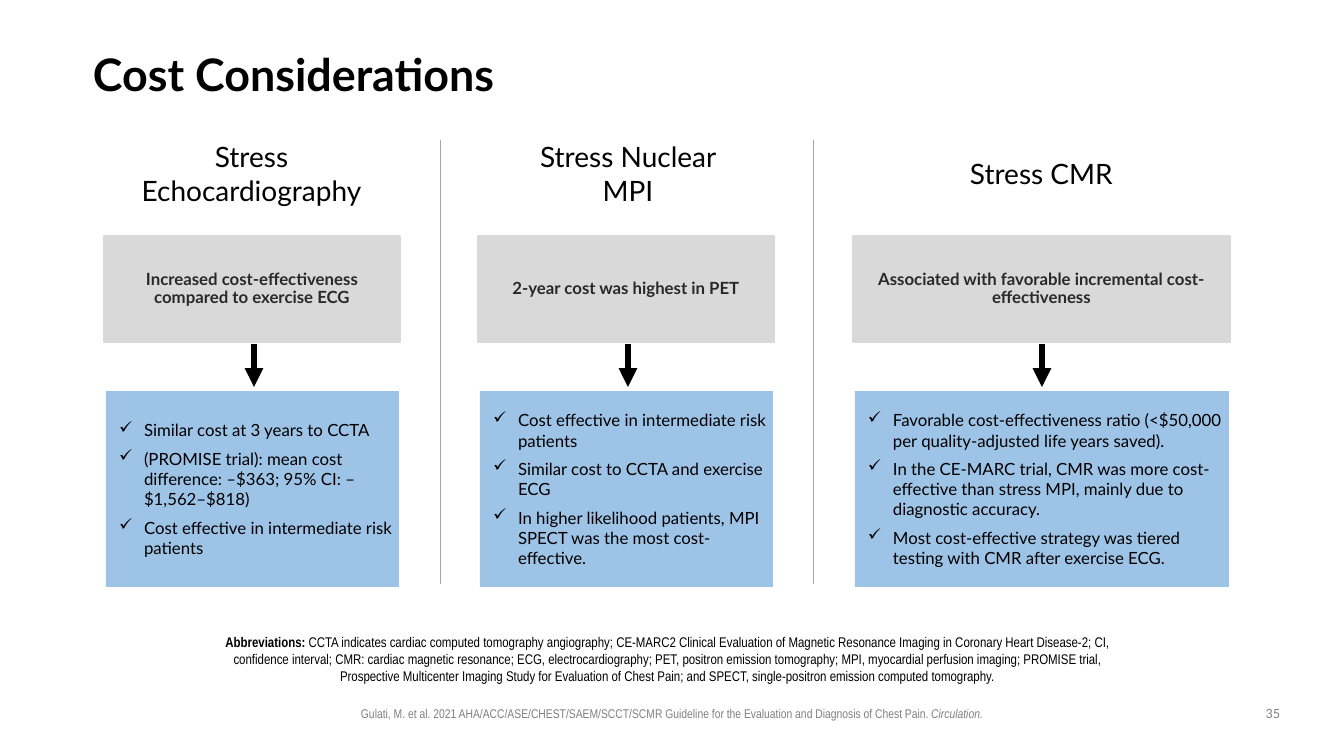
from lxml import etree
from pptx import Presentation
from pptx import util as u
from pptx.dml.color import RGBColor
from pptx.enum import shapes, text
from pptx.oxml.ns import qn

PX = 914400 / 100.8
COLORS = {"ink": "000000", "finding": "292929", "muted": "808080",
          "rule": "A6A6A6", "gray": "D9D9D9", "blue": "9DC3E6"}
CENTER, LEFT = text.PP_ALIGN.CENTER, text.PP_ALIGN.LEFT
TOP, MIDDLE = text.MSO_ANCHOR.TOP, text.MSO_ANCHOR.MIDDLE

deck = Presentation()
deck.slide_width, deck.slide_height = round(1344 * PX), round(756 * PX)
slide = deck.slides.add_slide(deck.slide_layouts[6])


def add_box(area, paragraphs, size, color="ink", font="Lato", fill=None, align=CENTER,
            anchor=TOP, insets=(10, 5, 10, 5), spacing=None, checks=False):
    """Add a text box, or a filled rectangle; each paragraph is a list of (text, style) runs."""
    place = [round(n * PX) for n in area]
    if fill:
        box = slide.shapes.add_shape(shapes.MSO_SHAPE.RECTANGLE, *place)
        box.shadow.inherit = False
        box.fill.solid()
        box.fill.fore_color.rgb = RGBColor.from_string(COLORS[fill])
        box.line.fill.background()
    else:
        box = slide.shapes.add_textbox(*place)
    frame = box.text_frame
    frame.word_wrap = True
    frame.vertical_anchor = anchor
    (frame.margin_left, frame.margin_top,
     frame.margin_right, frame.margin_bottom) = [round(n * PX) for n in insets]
    for i, runs in enumerate(paragraphs):
        para = frame.add_paragraph() if i else frame.paragraphs[0]
        if checks:
            props = para._p.get_or_add_pPr()
            props.set("marL", str(round(38 * PX)))
            props.set("indent", str(round(-25 * PX)))
            etree.SubElement(props, qn("a:buChar")).set("char", "✓")
            para.space_after = u.Pt(6)
        para.alignment = align
        if spacing:
            para.line_spacing = spacing
        for words, style in runs:
            run = para.add_run()
            run.text = words
            run.font.name, run.font.size = font, u.Pt(size)
            run.font.bold, run.font.italic = style == "bold", style == "italic"
            run.font.color.rgb = RGBColor.from_string(COLORS[color])
    return box


def add_vertical(x, top, bottom, color, width):
    x, top, bottom = round(x * PX), round(top * PX), round(bottom * PX)
    line = slide.shapes.add_connector(shapes.MSO_CONNECTOR.STRAIGHT, x, top, x, bottom)
    line.line.color.rgb = RGBColor.from_string(COLORS[color])
    line.line.width = u.Pt(width)
    etree.SubElement(line._element.spPr, qn("a:effectLst"))
    return line


add_box((93, 40, 1159, 73), [[("Cost Considerations", "bold")]], 32,
        align=LEFT, anchor=MIDDLE, insets=(0, 0, 0, 0), spacing=0.9)

for divider_x in (440, 813):
    add_vertical(divider_x, 140, 584, "rule", 0.5)

# test, heading left and width, card left and width, arrow x, finding, details
tests = [
    ("Stress Echocardiography", 105, 293, 104, 296, 254,
     "Increased cost-effectiveness compared to exercise ECG",
     ["Similar cost at 3 years to CCTA",
      "(PROMISE trial): mean cost difference: –$363; 95% CI: –$1,562–$818)",
      "Cost effective in intermediate risk patients"]),
    ("Stress Nuclear MPI", 525, 206, 478, 296, 628,
     "2-year cost was highest in PET",
     ["Cost effective in intermediate risk patients",
      "Similar cost to CCTA and exercise ECG",
      "In higher likelihood patients, MPI SPECT was the most cost-effective."]),
    ("Stress CMR", 924, 235, 853, 377, 1042,
     "Associated with favorable incremental cost-effectiveness",
     ["Favorable cost-effectiveness ratio (<$50,000 per quality-adjusted life years saved).",
      "In the CE-MARC trial, CMR was more cost-effective than stress MPI, "
      "mainly due to diagnostic accuracy.",
      "Most cost-effective strategy was tiered testing with CMR after exercise ECG."]),
]
for test, heading_x, heading_w, card_x, card_w, arrow_x, finding, details in tests:
    add_box((heading_x, 134, heading_w, 78), [[(test, None)]], 20, anchor=MIDDLE)

    card = add_box((card_x, 236, card_w, 106), [[(finding, "bold")]], 12, "finding",
                   fill="gray", anchor=MIDDLE, insets=(20, 20, 20, 20), spacing=0.9)
    card.line.color.rgb = RGBColor.from_string(COLORS["gray"])
    card.line.width = u.Pt(2)

    arrow = add_vertical(arrow_x, 344, 387, "ink", 4.5)
    etree.SubElement(arrow.line._get_or_add_ln(), qn("a:tailEnd")).set("type", "triangle")

    add_box((card_x + 2, 391, card_w - 3, 196), [[(detail, None)] for detail in details], 12,
            fill="blue", align=LEFT, anchor=MIDDLE, insets=(0, 0, 0, 0), checks=True)

abbreviations = (
    "CCTA indicates cardiac computed tomography angiography; CE-MARC2 Clinical Evaluation of "
    "Magnetic Resonance Imaging in Coronary Heart Disease-2; CI, confidence interval; CMR: "
    "cardiac magnetic resonance; ECG, electrocardiography; PET, positron emission tomography; "
    "MPI, myocardial perfusion imaging; PROMISE trial, Prospective Multicenter Imaging Study "
    "for Evaluation of Chest Pain; and SPECT, single-positron emission computed tomography.")
add_box((218, 629, 908, 57), [[("Abbreviations: ", "bold"), (abbreviations, None)]], 10,
        font="Arial Narrow", insets=(0, 5, 10, 5))

citation = ("Gulati, M. et al. 2021 AHA/ACC/ASE/CHEST/SAEM/SCCT/SCMR Guideline for the "
            "Evaluation and Diagnosis of Chest Pain. ")
add_box((320, 701, 704, 25), [[(citation, None), ("Circulation.", "italic")]], 9,
        "muted", font="Arial Narrow")
add_box((1252, 701, 42, 26), [[("35", None)]], 9, "muted")

deck.save("out.pptx")
